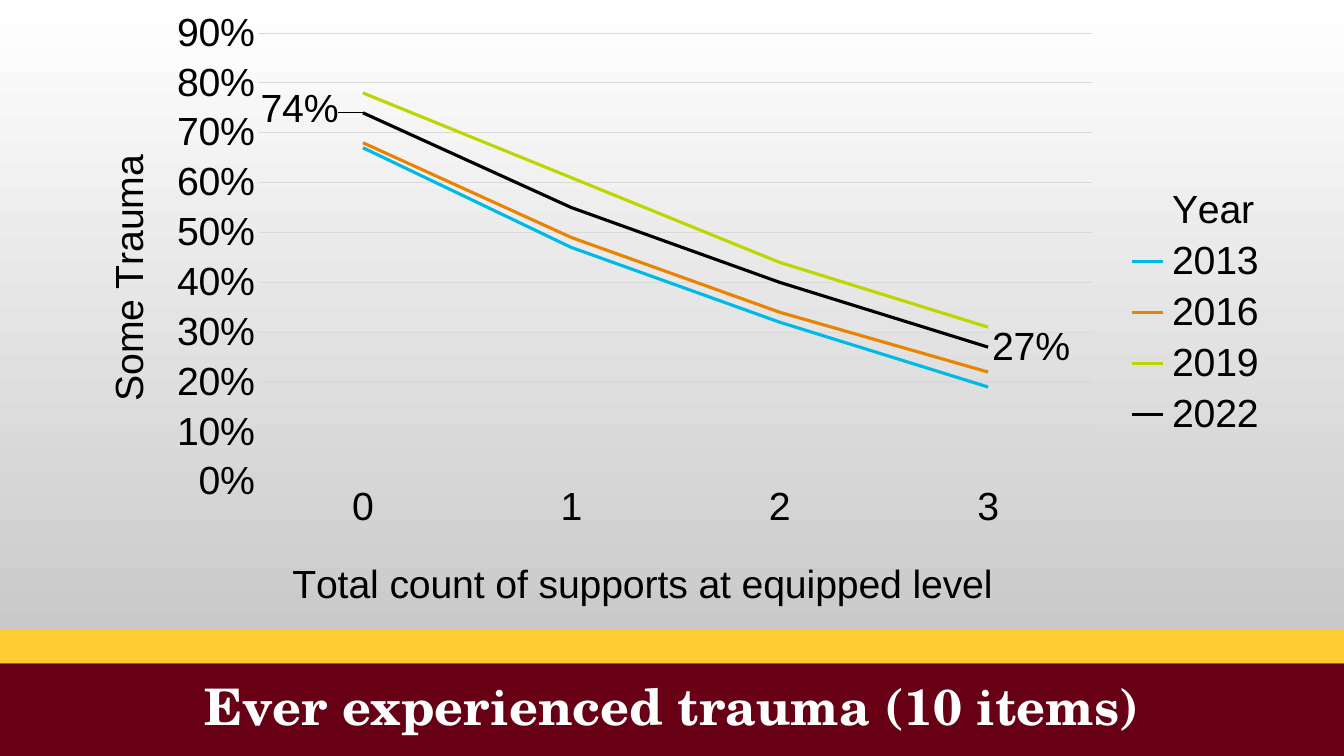
from dataclasses import dataclass

from lxml import etree
from pptx import Presentation
from pptx.chart.data import CategoryChartData
from pptx.dml.color import RGBColor
from pptx.enum.chart import XL_CHART_TYPE, XL_LABEL_POSITION, XL_LEGEND_POSITION, XL_TICK_MARK
from pptx.enum.shapes import MSO_SHAPE
from pptx.enum.text import MSO_ANCHOR, PP_ALIGN
from pptx.oxml.ns import qn
from pptx.util import Inches, Pt

LINE = XL_CHART_TYPE.LINE
LEFT, RIGHT = XL_LABEL_POSITION.LEFT, XL_LABEL_POSITION.RIGHT
NO_TICK = XL_TICK_MARK.NONE

TITLE = "Ever experienced trauma (10 items)"
X_TITLE = "Total count of supports at equipped level"
Y_TITLE = "Some Trauma"
SUPPORTS = ["0", "1", "2", "3"]
# The empty first series serves as the heading of the legend.
SERIES = [
    ("Year", [None] * 4, None),
    ("2013", [0.67, 0.47, 0.32, 0.19], "00B9E4"),
    ("2016", [0.68, 0.49, 0.34, 0.22], "E98300"),
    ("2019", [0.78, 0.61, 0.44, 0.31], "BED600"),
    ("2022", [0.74, 0.55, 0.40, 0.27], "000000"),
]
LABELLED_YEAR = "2022"
POINT_LABELS = [(0, LEFT), (3, RIGHT)]


@dataclass(frozen=True)
class Theme:
    maroon: str = "670015"
    gold: str = "FFCC33"
    white: str = "FFFFFF"
    black: str = "000000"
    shade: str = "BFBFBF"
    grid: str = "D9D9D9"
    title_font: str = "TeX Gyre Schola"
    chart_font: str = "Arial"
    title_size: int = 36
    chart_size: int = 28


THEME = Theme()


def rgb(value):
    return RGBColor.from_string(value)


def style_font(font, name, size, color, bold=False):
    font.name, font.size, font.bold = name, Pt(size), bold
    font.color.rgb = rgb(color)


def style_chart_font(font):
    style_font(font, THEME.chart_font, THEME.chart_size, THEME.black)


def style_line(line, color, width):
    line.color.rgb = rgb(color)
    line.width = Pt(width)


def set_layout(element, after, inner=False, **fractions):
    """Place a chart part by fractions of the chart; after names the preceding child, if any."""
    for old in element.findall(qn("c:layout")):
        element.remove(old)
    layout = etree.Element(qn("c:layout"))
    manual = etree.SubElement(layout, qn("c:manualLayout"))
    if inner:
        etree.SubElement(manual, qn("c:layoutTarget")).set("val", "inner")
    if after != "c:idx":
        for mode in ("xMode", "yMode"):
            etree.SubElement(manual, qn(f"c:{mode}")).set("val", "edge")
    for key, value in fractions.items():
        etree.SubElement(manual, qn(f"c:{key}")).set("val", str(value))
    previous = element.find(qn(after)) if after else None
    if previous is None:
        element.insert(0, layout)
    else:
        previous.addnext(layout)


def add_band(s, top, height, color):
    band = s.shapes.add_shape(MSO_SHAPE.RECTANGLE, 0, Inches(top), Inches(13.33), Inches(height))
    band.shadow.inherit = False
    band.fill.solid()
    band.fill.fore_color.rgb = rgb(color)
    band.line.fill.background()
    s.shapes._spTree.insert(2, band._element)  # behind the title


def add_title(s):
    title = s.shapes.title
    title.left, title.top = 0, Inches(6.58)
    title.width, title.height = Inches(13.33), Inches(0.92)
    tf = title.text_frame
    tf.text = TITLE
    tf.vertical_anchor = MSO_ANCHOR.MIDDLE
    p = tf.paragraphs[0]
    p.alignment, p.line_spacing = PP_ALIGN.CENTER, 0.9
    style_font(p.font, THEME.title_font, THEME.title_size, THEME.white, bold=True)


def style_axis(axis, text, x, y):
    axis.major_tick_mark = axis.minor_tick_mark = NO_TICK
    style_chart_font(axis.tick_labels.font)
    tf = axis.axis_title.text_frame
    tf.text = text
    style_chart_font(tf.paragraphs[0].font)
    tf.paragraphs[0].font.bold = False
    set_layout(axis.axis_title._element, "c:tx", x=x, y=y)


def add_trauma_chart(s):
    data = CategoryChartData(number_format="0%")
    data.categories = SUPPORTS
    for name, values, _ in SERIES:
        data.add_series(name, values)
    frame = s.shapes.add_chart(LINE, Inches(0.67), 0, Inches(12), Inches(6.2), data)
    chart = frame.chart
    chart.has_title = False
    style_chart_font(chart.font)
    set_layout(chart._chartSpace.chart.plotArea, None, inner=True,
               x=0.158, y=0.053, w=0.689, h=0.718)

    style_axis(chart.category_axis, X_TITLE, 0.18, 0.883)
    style_line(chart.category_axis.format.line, THEME.grid, 0.75)
    value_axis = chart.value_axis
    style_axis(value_axis, Y_TITLE, 0.024, 0.237)
    value_axis.minimum_scale, value_axis.maximum_scale, value_axis.major_unit = 0, 0.9, 0.1
    value_axis.tick_labels.number_format = "0%"
    value_axis.tick_labels.number_format_is_linked = False
    value_axis.format.line.fill.background()
    style_line(value_axis.major_gridlines.format.line, THEME.grid, 0.75)

    chart.has_legend = True
    chart.legend.position = XL_LEGEND_POSITION.RIGHT
    chart.legend.include_in_layout = False
    style_chart_font(chart.legend.font)
    set_layout(chart.legend._element, "c:legendPos", x=0.872, y=0.29, w=0.12, h=0.42)

    chart.plots[0].vary_by_categories = False
    for series, (name, _, color) in zip(chart.plots[0].series, SERIES):
        series.smooth = False
        if color:
            style_line(series.format.line, color, 2.25)
        else:
            series.format.line.fill.background()
        if name == LABELLED_YEAR:
            for index, position in POINT_LABELS:
                label = series.points[index].data_label
                style_chart_font(label.font)
                label.position = position
                if position == LEFT:
                    set_layout(label._dLbl, "c:idx", x=-0.017, y=-0.005)


def main():
    prs = Presentation()
    prs.slide_width, prs.slide_height = Inches(13.33), Inches(7.5)
    s = prs.slides.add_slide(prs.slide_layouts[5])
    fill = s.background.fill
    fill.gradient()
    fill.gradient_angle = 270
    for stop, color in zip(fill.gradient_stops, (THEME.white, THEME.shade)):
        stop.color.rgb = rgb(color)
    add_band(s, 6.25, 0.33, THEME.gold)
    add_band(s, 6.58, 0.92, THEME.maroon)
    add_title(s)
    add_trauma_chart(s)
    prs.save("out.pptx")


if __name__ == "__main__":
    main()
